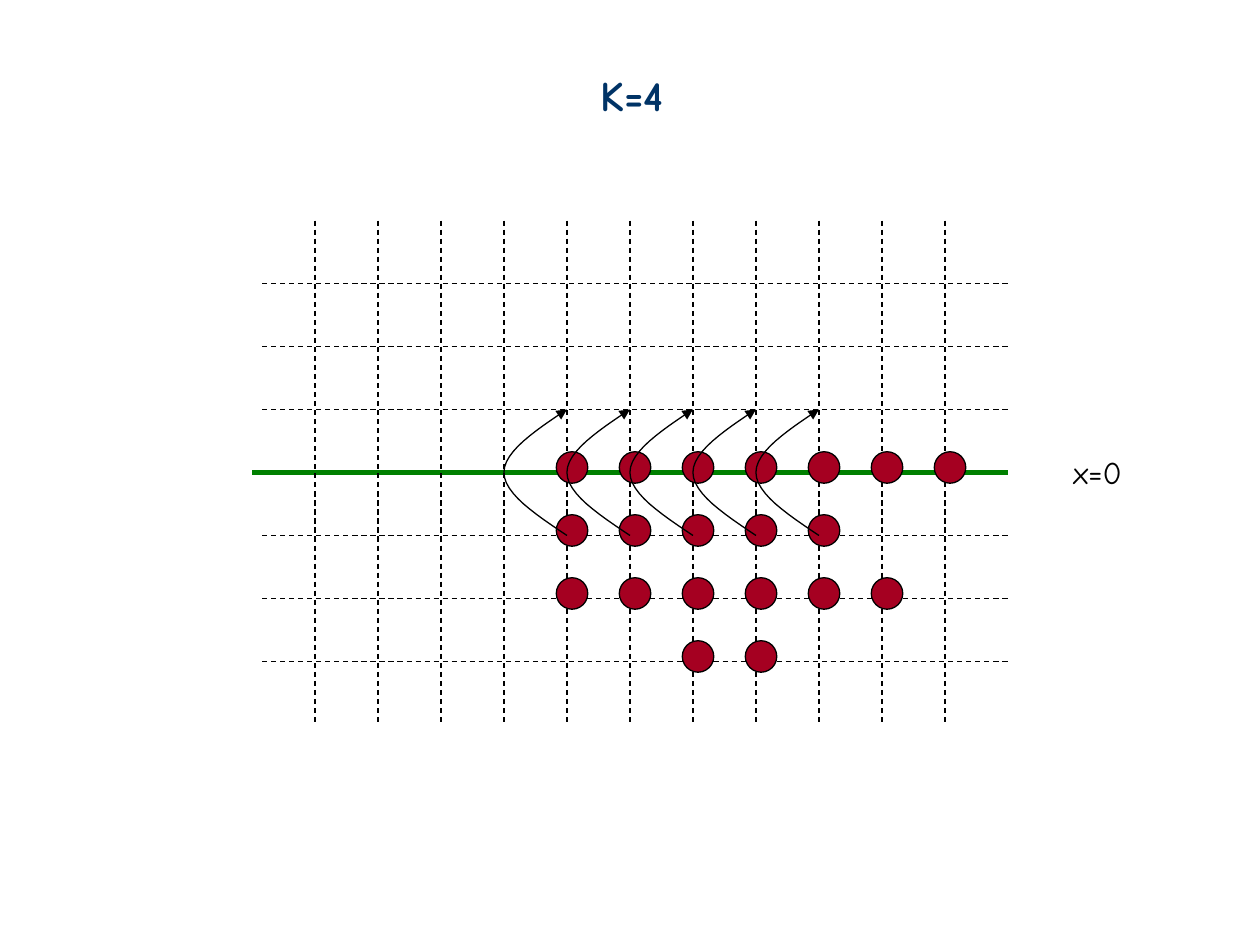
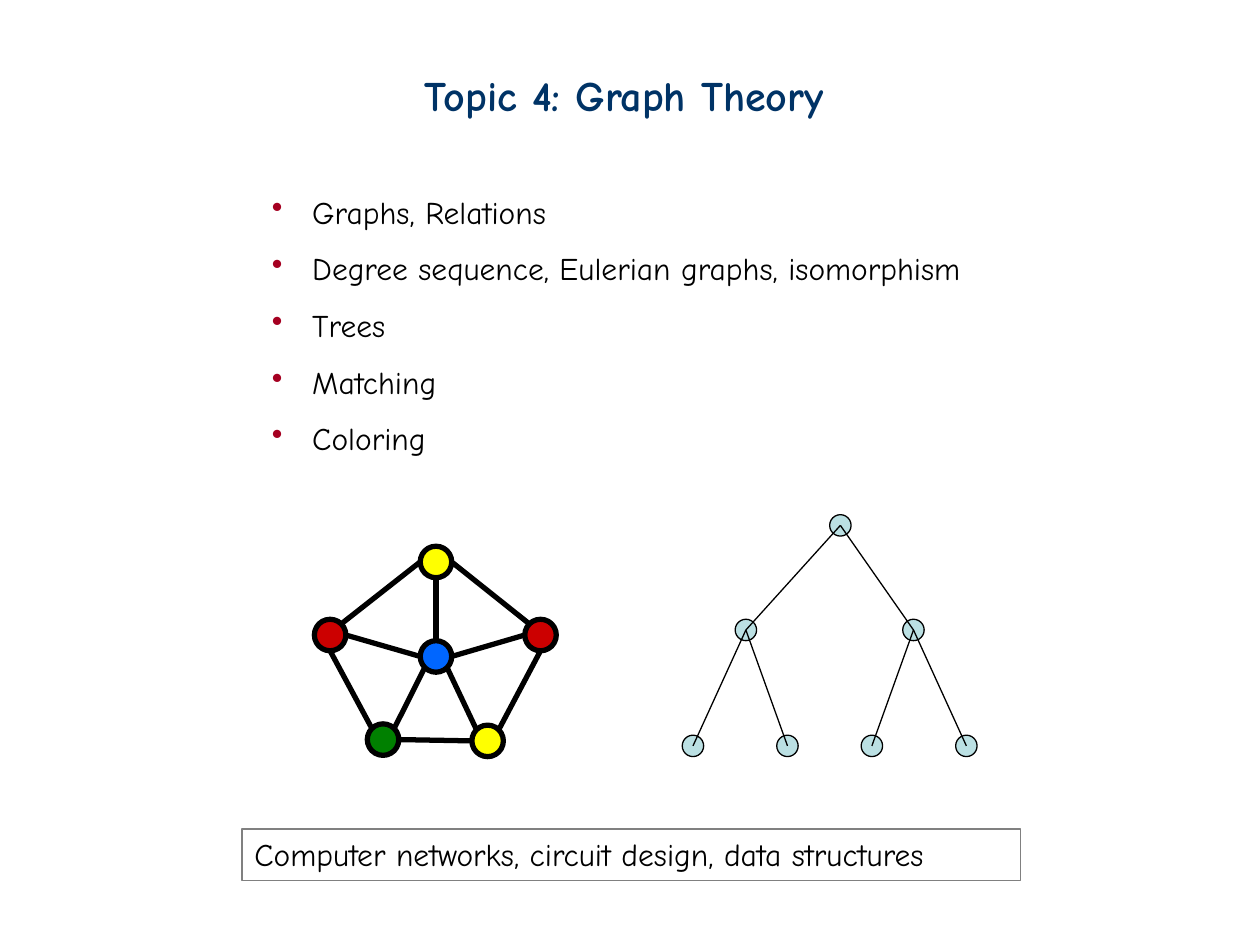
from dataclasses import dataclass
from math import cos, pi, sin

from lxml.etree import SubElement
from pptx import Presentation
from pptx.dml.color import RGBColor
from pptx.enum.dml import MSO_LINE
from pptx.enum.shapes import MSO_CONNECTOR, MSO_SHAPE
from pptx.enum.text import MSO_ANCHOR, MSO_AUTO_SIZE, PP_ALIGN
from pptx.oxml.ns import qn
from pptx.util import Inches, Pt


@dataclass(frozen=True)
class Theme:
    font: str = "Comic Neue"
    head: int = 24
    body: int = 18
    thin: float = 0.75
    bold: float = 3
    navy: RGBColor = RGBColor(0, 51, 102)
    black: RGBColor = RGBColor(0, 0, 0)
    grey: RGBColor = RGBColor(128, 128, 128)
    wine: RGBColor = RGBColor(165, 0, 33)
    green: RGBColor = RGBColor(0, 128, 0)
    red: RGBColor = RGBColor(204, 0, 0)
    yellow: RGBColor = RGBColor(255, 255, 0)
    blue: RGBColor = RGBColor(0, 102, 255)
    pale: RGBColor = RGBColor(187, 224, 227)


theme = Theme()
CELL = 0.5


def add_line(slide, start, end, width=theme.thin, color=theme.black, dash=None):
    line = slide.shapes.add_connector(
        MSO_CONNECTOR.STRAIGHT, *[Inches(v) for v in (*start, *end)])
    line.line.color.rgb = color
    line.line.width = Pt(width)
    line.line.dash_style = dash
    SubElement(line.element.spPr, qn("a:effectLst"))


def add_dot(slide, mid, size, fill, width=theme.thin):
    x, y = mid
    dot = slide.shapes.add_shape(
        MSO_SHAPE.OVAL, *[Inches(v) for v in (x - size / 2, y - size / 2, size, size)])
    dot.shadow.inherit = False
    dot.fill.solid()
    dot.fill.fore_color.rgb = fill
    dot.line.color.rgb = theme.black
    dot.line.width = Pt(width)


deck = Presentation()
deck.slide_width, deck.slide_height = Inches(20 * CELL), Inches(15 * CELL)

# Slides and their titles
slides = []
for text, left, width in [("K=4", 4.61, 0.81), ("Topic 4: Graph Theory", 3, 3.91)]:
    slide = deck.slides.add_slide(deck.slide_layouts[5])
    title = slide.shapes.title
    title.left, title.top = Inches(left), Inches(CELL)
    title.width, title.height = Inches(width), Inches(CELL)
    title.text_frame.text = text
    title.text_frame.word_wrap = False
    title.text_frame.auto_size = MSO_AUTO_SIZE.NONE
    title.text_frame.vertical_anchor = MSO_ANCHOR.MIDDLE
    title.text_frame.paragraphs[0].alignment = PP_ALIGN.CENTER
    slides.append(slide)
board, topic = slides

# Text boxes
topics = ["Graphs, Relations", "Degree sequence, Eulerian graphs, isomorphism",
          "Trees", "Matching", "Coloring"]
boxes = []
for slide, text, area in [
    (board, "x=0", (8.42, 3.55, 0.8, 0.4)),
    (topic, "\n".join(topics), (2.06, 1.33, 5.86, 2.36)),
    (topic, "Computer networks, circuit design, data structures", (1.92, 6.58, 6.18, 0.41)),
]:
    box = slide.shapes.add_textbox(*[Inches(v) for v in area])
    box.text_frame.word_wrap = True
    box.text_frame.text = text
    boxes.append(box)
label, items, footer = boxes
footer.line.color.rgb = theme.grey
footer.line.width = Pt(theme.thin)

# Bullets
for para in items.text_frame.paragraphs:
    para.line_spacing = 1.5
    props = para._p.get_or_add_pPr()
    props.set("marL", str(Inches(0.32)))
    props.set("indent", str(-Inches(0.32)))
    tint = SubElement(props, qn("a:buClr"))
    SubElement(tint, qn("a:srgbClr"), val=str(theme.wine))
    SubElement(props, qn("a:buChar"), char="•")

# Board: dashed grid around the base line
base = 7.5 * CELL
add_line(board, (4 * CELL, base), (16 * CELL, base), theme.bold, theme.green)
for col in range(5, 16):
    add_line(board, (col * CELL, 1.75), (col * CELL, 5.75), dash=MSO_LINE.DASH)
for row in (-3, -2, -1, 1, 2, 3):
    y = base + row * CELL
    add_line(board, (2.08, y), (16 * CELL, y), dash=MSO_LINE.DASH)

# Board: pegs, first and last column of each row
for row, (first, last) in enumerate([(9, 15), (9, 13), (9, 14), (11, 12)]):
    for col in range(first, last + 1):
        add_dot(board, (col * CELL + 0.04, base + row * CELL - 0.04), 0.25, theme.wine)

# Board: curved jumps, each made of two mirrored Bezier halves
steps = 12
bend = []
for i in range(steps + 1):
    t = i / steps
    s = 1 - t
    bend.append((s**3 + 1.5 * s * s * t, s**3 + 2 * s * s * t + s * t * t))
bend += [(x, -y) for x, y in bend[-2::-1]]
for col in range(8, 13):
    spots = [(Inches((col + x) * CELL), Inches(base + y * CELL)) for x, y in bend]
    pen = board.shapes.build_freeform(*spots[0])
    pen.add_line_segments(spots[1:], close=False)
    jump = pen.convert_to_shape()
    jump.shadow.inherit = False
    jump.fill.background()
    jump.line.color.rgb = theme.black
    jump.line.width = Pt(theme.thin)
    SubElement(jump.element.spPr.find(qn("a:ln")), qn("a:tailEnd"), type="triangle")

# Wheel: coloured nodes, joined at compass points of their rims
size = 0.25
wheel = {
    "top": (3.46, 4.46, theme.yellow), "west": (2.62, 5.04, theme.red),
    "east": (4.29, 5.04, theme.red), "hub": (3.46, 5.21, theme.blue),
    "left": (3.04, 5.87, theme.green), "right": (3.87, 5.88, theme.yellow),
}
for x, y, fill in wheel.values():
    add_dot(topic, (x, y), size, fill, theme.bold)
points = ["E", "SE", "S", "SW", "W", "NW", "N", "NE"]
for edge in [
    ("left", "E", "right", "W"), ("top", "E", "east", "NW"),
    ("east", "S", "right", "NE"), ("top", "W", "west", "NE"),
    ("west", "S", "left", "NW"), ("top", "S", "hub", "N"),
    ("hub", "E", "east", "W"), ("hub", "SE", "right", "NW"),
    ("hub", "SW", "left", "NE"), ("hub", "W", "west", "E"),
]:
    ends = []
    for node, side in (edge[:2], edge[2:]):
        x, y, fill = wheel[node]
        turn = points.index(side) * pi / 4
        ends.append((x + size / 2 * cos(turn), y + size / 2 * sin(turn)))
    add_line(topic, *ends, theme.bold)

# Tree: node i hangs from node (i - 1) // 2
tree = [(6.67, 4.17), (5.92, 5), (7.25, 5)]
tree += [(x, 5.92) for x in (5.5, 6.25, 6.92, 7.67)]
for node in tree:
    add_dot(topic, node, 0.17, theme.pale)
for i, node in enumerate(tree[1:], 1):
    add_line(topic, tree[(i - 1) // 2], node)

# Type: one style for titles, one for the rest
for slide in slides:
    for shape in slide.shapes:
        if not shape.has_text_frame:
            continue
        head = shape.is_placeholder
        for para in shape.text_frame.paragraphs:
            for run in para.runs:
                run.font.name = theme.font
                run.font.size = Pt(theme.head if head else theme.body)
                run.font.bold = head
                run.font.color.rgb = theme.navy if head else theme.black

deck.save("out.pptx")
